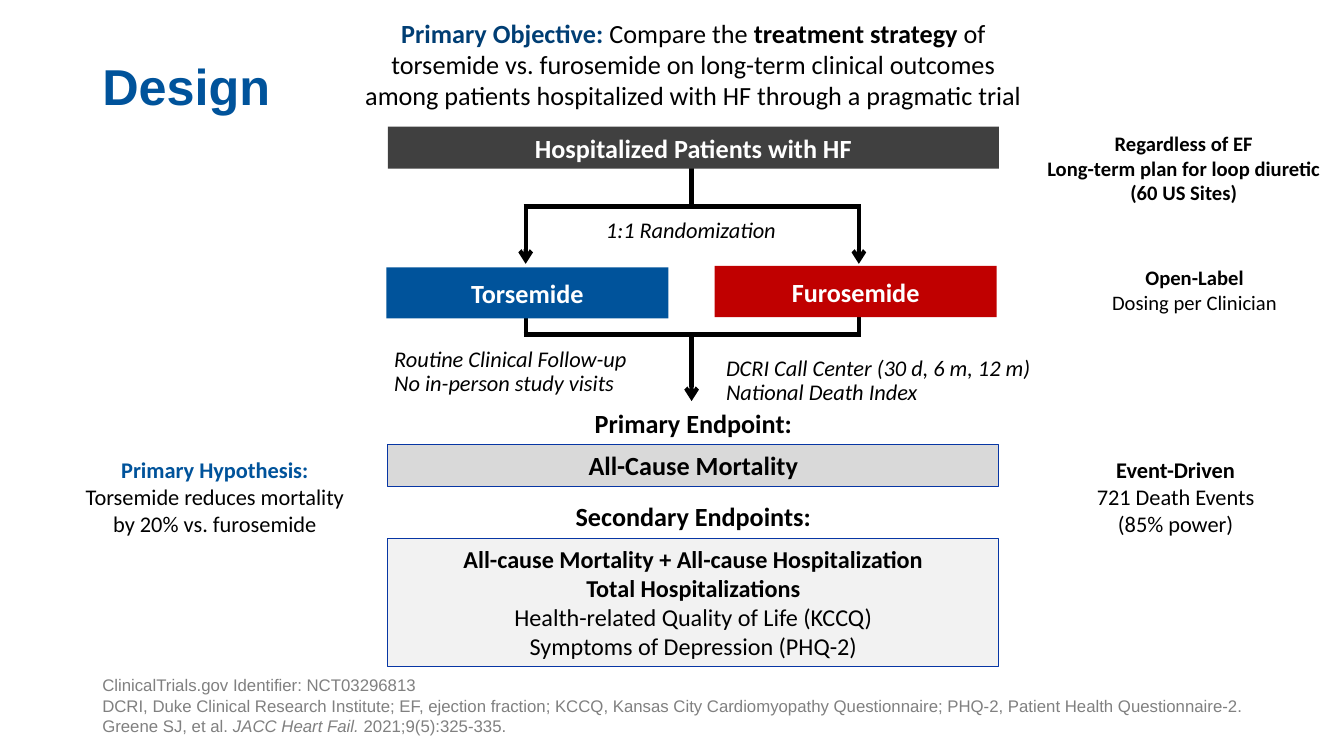
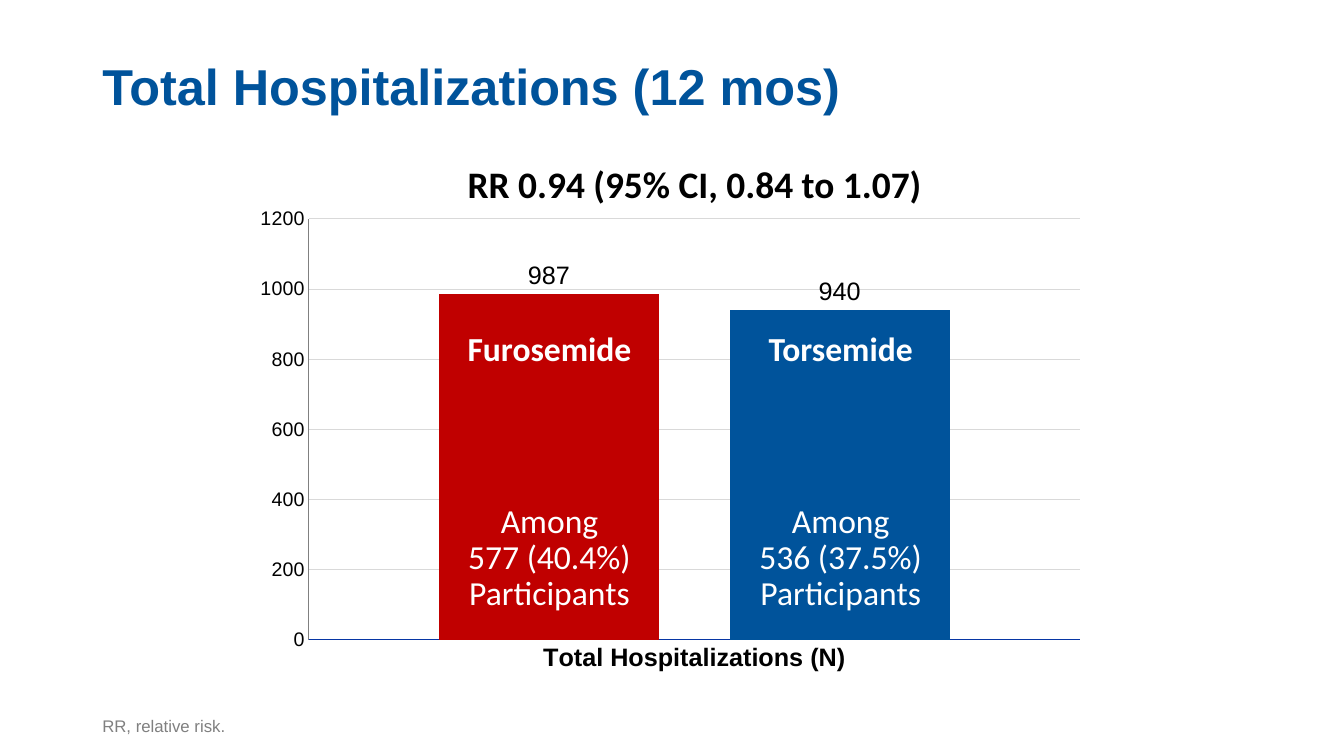
from lxml import etree
from pptx import Presentation
from pptx.chart.data import CategoryChartData
from pptx.dml.color import RGBColor
from pptx.enum.chart import XL_CHART_TYPE, XL_LABEL_POSITION, XL_TICK_MARK
from pptx.enum.shapes import MSO_CONNECTOR, MSO_SHAPE
from pptx.enum.text import MSO_ANCHOR, PP_ALIGN
from pptx.oxml import parse_xml
from pptx.oxml.ns import nsdecls, qn
from pptx.util import Pt

LEFT, CENTER = PP_ALIGN.LEFT, PP_ALIGN.CENTER
TOP, MIDDLE, BOTTOM = MSO_ANCHOR.TOP, MSO_ANCHOR.MIDDLE, MSO_ANCHOR.BOTTOM
RECTANGLE, STRAIGHT = MSO_SHAPE.RECTANGLE, MSO_CONNECTOR.STRAIGHT
COLUMNS, OUTSIDE, NO_TICK = (
    XL_CHART_TYPE.COLUMN_CLUSTERED, XL_LABEL_POSITION.OUTSIDE_END, XL_TICK_MARK.NONE)

BLUE, NAVY, RED, EDGE = "00539B", "003E74", "C00000", "0736A4"
BLACK, WHITE, GRAY = "000000", "FFFFFF", "808080"
CHARCOAL, SILVER, PALE = "404040", "D9D9D9", "F2F2F2"

BODY = {"name": "Calibri", "size": Pt(16), "color": BLACK, "bold": False, "italic": False}
HEADING = {**BODY, "size": Pt(18.7), "bold": True}
BAR_TEXT = {**HEADING, "color": WHITE}
NOTE = {**BODY, "italic": True}
SIDE = {**BODY, "size": Pt(14.7)}
TITLE = {"name": "Arial", "size": Pt(36), "color": BLUE, "bold": True}
FOOTER = {"name": "Arial", "size": Pt(12), "color": GRAY}
COLUMN_TEXT = {**BODY, "size": Pt(24), "color": WHITE}
AXIS_TEXT = {"name": "Arial", "size": Pt(14), "color": BLACK, "bold": False}
BOLD, PLAIN, ITALIC = {"bold": True}, {"bold": False}, {"italic": True}


def rgb(value):
    return RGBColor.from_string(value)


def apply_font(font, style):
    for name, value in style.items():
        if name == "color":
            font.color.rgb = rgb(value)
        else:
            setattr(font, name, value)


class Deck:
    """Holds the shared style and the slide being built."""

    def __init__(self):
        self.deck = Presentation()
        self.deck.slide_width, self.deck.slide_height = Pt(960), Pt(540)
        self.page = None

    def add_page(self, title, footer):
        self.page = self.deck.slides.add_slide(self.deck.slide_layouts[6])
        self.text((66, 0, 828, 87), [title], TITLE, LEFT, BOTTOM, 0.9)
        self.text((66, 500.5, 873, 28.5), footer, FOOTER, LEFT, BOTTOM)

    def fill_text(self, shape, paragraphs, style, align, anchor, spacing=None):
        frame = shape.text_frame
        frame.word_wrap = True
        frame.vertical_anchor = anchor
        for index, spans in enumerate(paragraphs):
            para = frame.paragraphs[0] if index == 0 else frame.add_paragraph()
            para.alignment = align
            para.line_spacing = spacing
            for words, change in [(spans, {})] if isinstance(spans, str) else spans:
                span = para.add_run()
                span.text = words
                apply_font(span.font, {**style, **change})

    def text(self, place, paragraphs, style=BODY, align=CENTER, anchor=TOP, spacing=None):
        box = self.page.shapes.add_textbox(*map(Pt, place))
        self.fill_text(box, paragraphs, style, align, anchor, spacing)

    def bar(self, place, paragraphs, fill, style=BAR_TEXT, edge=None):
        box = self.page.shapes.add_shape(RECTANGLE, *map(Pt, place))
        box.shadow.inherit = False
        box.fill.solid()
        box.fill.fore_color.rgb = rgb(fill)
        if edge:
            box.line.color.rgb = rgb(edge)
            box.line.width = Pt(0.75)
        else:
            box.line.fill.background()
        self.fill_text(box, paragraphs, style, CENTER, MIDDLE)

    def link(self, x1, y1, x2, y2, arrow=False):
        line = self.page.shapes.add_connector(STRAIGHT, *map(Pt, (x1, y1, x2, y2)))
        line.line.color.rgb = rgb(BLACK)
        line.line.width = Pt(3)
        properties = line.element.spPr
        if arrow:
            etree.SubElement(properties.find(qn("a:ln")), qn("a:tailEnd"), type="arrow")
        etree.SubElement(properties, qn("a:effectLst"))

    def column_chart(self, place, category, series, layout):
        data = CategoryChartData()
        data.categories = [category]
        for name, value, _ in series:
            data.add_series(name, [value])
        chart = self.page.shapes.add_chart(COLUMNS, *map(Pt, place), data).chart
        chart.has_legend = chart.has_title = False
        apply_font(chart.font, {**AXIS_TEXT, "size": Pt(10)})
        plot = chart.plots[0]
        plot.vary_by_categories = False
        plot.gap_width, plot.overlap = 118, -32
        plot.has_data_labels = True
        labels = plot.data_labels
        labels.show_value, labels.position = True, OUTSIDE
        apply_font(labels.font, {**AXIS_TEXT, "size": Pt(18)})
        for drawn, (_, _, color) in zip(plot.series, series):
            drawn.format.fill.solid()
            drawn.format.fill.fore_color.rgb = rgb(color)
        scale = chart.value_axis
        scale.minimum_scale, scale.maximum_scale, scale.major_unit = 0, 1200, 200
        category_text = {**AXIS_TEXT, "size": Pt(18), "bold": True}
        for axis, style, color in ((chart.category_axis, category_text, EDGE),
                                   (scale, AXIS_TEXT, GRAY)):
            axis.major_tick_mark = axis.minor_tick_mark = NO_TICK
            apply_font(axis.tick_labels.font, style)
            axis.format.line.color.rgb = rgb(color)
            axis.format.line.width = Pt(0.75)
        grid = scale.major_gridlines.format.line
        grid.color.rgb = rgb(SILVER)
        grid.width = Pt(0.75)
        self.place_plot(chart, layout)

    def place_plot(self, chart, layout):
        area = chart.element.find(".//" + qn("c:plotArea"))
        for old in area.findall(qn("c:layout")):
            area.remove(old)
        modes = '<c:layoutTarget val="inner"/><c:xMode val="edge"/><c:yMode val="edge"/>'
        sizes = "".join(f'<c:{key} val="{value}"/>' for key, value in zip("xywh", layout))
        area.insert(0, parse_xml(
            f'<c:layout {nsdecls("c")}><c:manualLayout>{modes}{sizes}'
            '</c:manualLayout></c:layout>'))


def build_design(deck):
    deck.add_page("Design", [
        "ClinicalTrials.gov Identifier: NCT03296813",
        "DCRI, Duke Clinical Research Institute; EF, ejection fraction; KCCQ, Kansas City "
        "Cardiomyopathy Questionnaire; PHQ-2, Patient Health Questionnaire-2.",
        [("Greene SJ, et al. ", {}), ("JACC Heart Fail. ", ITALIC),
         ("2021;9(5):325-335.", {})],
    ])
    deck.text((249, 8.5, 492.5, 75), [[
        ("Primary Objective: ", {"color": NAVY}),
        ("Compare the ", PLAIN), ("treatment strategy", {}),
        (" of torsemide vs. furosemide on long-term clinical outcomes among patients "
         "hospitalized with HF through a pragmatic trial", PLAIN)]], HEADING)

    spine, arms = 494, (375.5, 613.5)
    split, merge = 147.5, 239
    deck.link(spine, 115, spine, split)
    deck.link(spine, merge, spine, 286.5, arrow=True)
    for arm in arms:
        deck.link(arm, split, arm, 188.5, arrow=True)
        deck.link(arm, 220, arm, merge)
    for level in (split, merge):
        deck.link(arms[0] - 1.5, level, arms[1] + 1.5, level)

    left, width = 277, 436.5
    deck.bar((left, 90.5, width, 30), ["Hospitalized Patients with HF"], CHARCOAL)
    deck.bar((276, 191, 201.5, 36.5), ["Torsemide"], BLUE)
    deck.bar((510.5, 190, 201.5, 36.5), ["Furosemide"], RED)
    deck.bar((left, 317.5, width, 30), ["All-Cause Mortality"], SILVER, HEADING, EDGE)
    deck.bar((left, 384.5, width, 91.5), [
        [("All-cause Mortality + All-cause Hospitalization", BOLD)],
        [("Total Hospitalizations", BOLD)],
        "Health-related Quality of Life (KCCQ)",
        "Symptoms of Depression (PHQ-2)",
    ], PALE, {**BODY, "size": Pt(17.3)}, EDGE)
    deck.text((left, 287.5, width, 30), ["Primary Endpoint:"], HEADING)
    deck.text((left, 353.5, width, 30), ["Secondary Endpoints:"], HEADING)

    deck.text((404, 151, 179, 27), ["1:1 Randomization"], NOTE)
    for x, y, notes in (
            (274.5, 244.5, ["Routine Clinical Follow-up", "No in-person study visits"]),
            (511.5, 251, ["DCRI Call Center (30 d, 6 m, 12 m)", "National Death Index"])):
        deck.text((x, y, 245.5, 44), notes, NOTE, LEFT, spacing=Pt(17.5))

    deck.text((736.5, 90, 218, 60.5), [
        "Regardless of EF", "Long-term plan for loop diuretic", "(60 US Sites)",
    ], {**SIDE, **BOLD})
    deck.text((762.5, 186, 181.5, 42.5),
              [[("Open-Label", BOLD)], "Dosing per Clinician"], SIDE)
    deck.text((749, 322.5, 181.5, 65.5),
              [[("Event-Driven", BOLD)], "721 Death Events", "(85% power)"])
    deck.text((49.5, 322.5, 208, 65.5), [
        [("Primary Hypothesis:", {"bold": True, "color": BLUE})],
        "Torsemide reduces mortality by 20% vs. furosemide"])


def build_hospitalizations(deck):
    deck.add_page("Total Hospitalizations (12 mos)", ["RR, relative risk."])
    deck.column_chart(
        (157, 106.5, 629.5, 396.5), "Total Hospitalizations (N)",
        [("Furosemide", 987, RED), ("Torsemide", 940, BLUE)],
        (0.101, 0.126, 0.875, 0.758))
    deck.text((258.5, 115, 476, 36), ["RR 0.94 (95% CI, 0.84 to 1.07)"],
              {**HEADING, "size": Pt(26.7)}, spacing=0.9)
    for x, drug, share in ((314.5, "Furosemide", "577 (40.4%)"),
                           (522.5, "Torsemide", "536 (37.5%)")):
        deck.text((x, 231, 156, 36), [drug], {**COLUMN_TEXT, **BOLD})
        deck.text((x, 356.5, 156, 85.5), ["Among", share, "Participants"],
                  COLUMN_TEXT, spacing=0.9)


def main():
    deck = Deck()
    build_design(deck)
    build_hospitalizations(deck)
    deck.deck.save("out.pptx")


if __name__ == "__main__":
    main()
